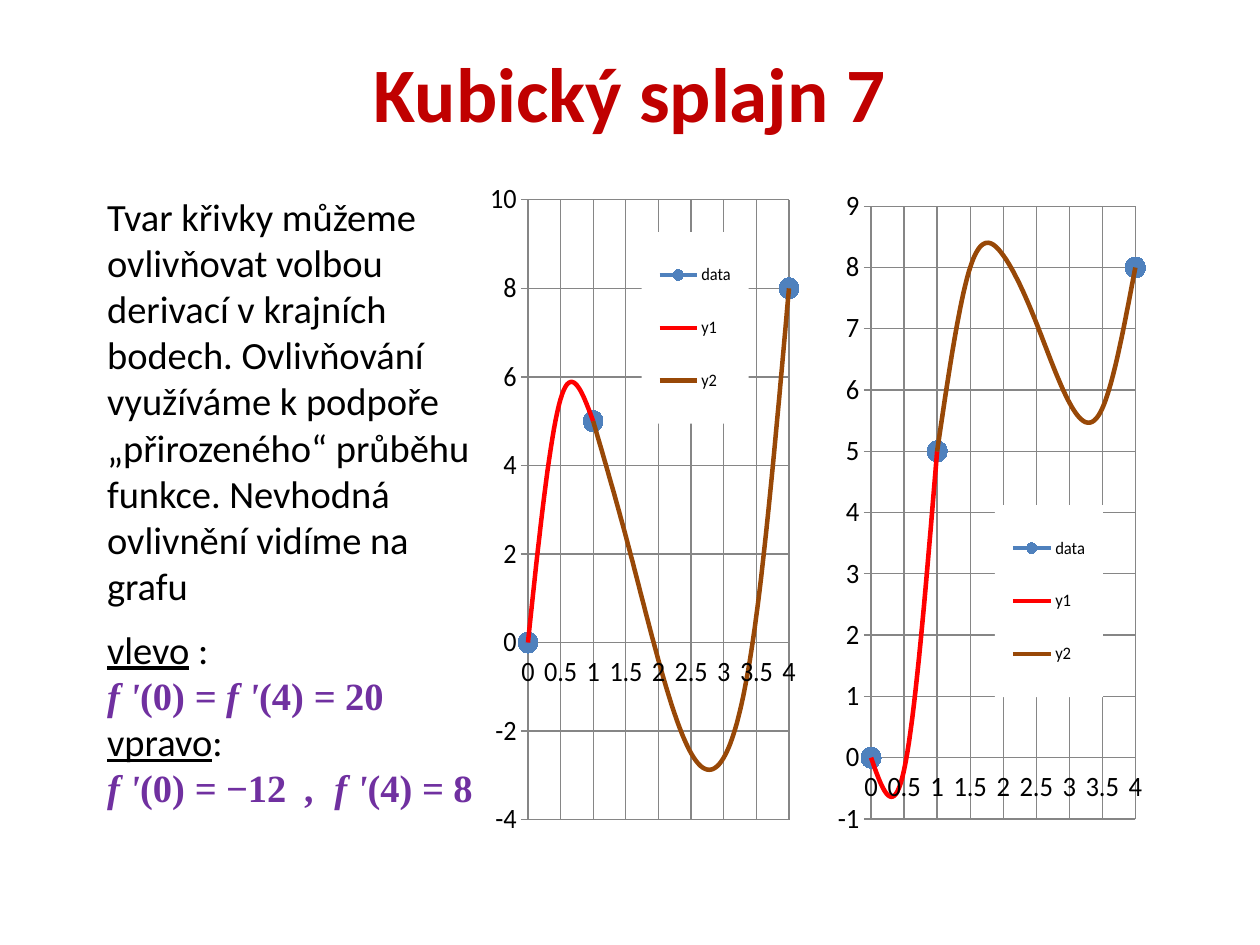
from lxml.etree import SubElement
from pptx import Presentation
from pptx.chart.data import CategoryChartData
from pptx.dml.color import RGBColor
from pptx.enum.chart import XL_CHART_TYPE, XL_LEGEND_POSITION, XL_MARKER_STYLE, XL_TICK_MARK
from pptx.enum.text import MSO_ANCHOR, MSO_AUTO_SIZE, PP_ALIGN
from pptx.oxml.ns import qn
from pptx.util import Inches, Pt

BLACK, RED, PURPLE = "000000", "C00000", "7030A0"
BLUE, BRIGHT_RED, BROWN, GREY, WHITE = "4F81BD", "FF0000", "984807", "868686", "FFFFFF"

PLAIN = {"name": "Calibri", "size": Pt(22), "color": BLACK, "bold": False}
LABEL = {**PLAIN, "underline": True}
NUMBER = {"name": "Times New Roman", "size": Pt(22), "color": PURPLE, "bold": True}
SYMBOL = {**NUMBER, "italic": True}

PARAGRAPHS = [
    [("Tvar křivky můžeme ovlivňovat volbou derivací v krajních bodech. "
      "Ovlivňování využíváme k podpoře „přirozeného“ průběhu funkce. "
      "Nevhodná ovlivnění vidíme na grafu", PLAIN)],
    [("vlevo", LABEL), (" :", PLAIN)],
    [("f '", SYMBOL), ("(0)", NUMBER), (" = f '", SYMBOL), ("(4)", NUMBER),
     (" = ", SYMBOL), ("20", NUMBER)],
    [("vpravo", LABEL), (":", PLAIN)],
    [("f '", SYMBOL), ("(0)", NUMBER), (" = ", SYMBOL), ("−12  ", NUMBER),
     (",  f '", SYMBOL), ("(4)", NUMBER), (" = ", SYMBOL), ("8", NUMBER)],
]

CATEGORIES = ["0", "0.5", "1", "1.5", "2", "2.5", "3", "3.5", "4"]
LEFT_CURVE = {
    "y1": [0, 5.5, 5], "y2": [5, 2.4, -0.4, -2.5, -2.6, 0.6, 8],
    "scale": (-4, 10, 2),
    "plot": (0.072, 0.051, 0.904, 0.906), "legend": (0.466, 0.098, 0.37, 0.28),
}
RIGHT_CURVE = {
    "y1": [0, -0.2, 5], "y2": [5, 8, 8.2, 7.1, 5.8, 5.7, 8],
    "scale": (-1, 9, 1),
    "plot": (0.072, 0.062, 0.904, 0.894), "legend": (0.495, 0.498, 0.37, 0.28),
}


def color(value):
    return RGBColor.from_string(value)


def set_font(font, style):
    for key, value in style.items():
        if key == "color":
            font.color.rgb = color(value)
        else:
            setattr(font, key, value)


def place(shape, box):
    for side, length in zip(("left", "top", "width", "height"), box):
        setattr(shape, side, Inches(length))


def add_title(page, box):
    title = page.shapes.title
    place(title, box)
    frame = title.text_frame
    frame.text = "Kubický splajn 7"
    frame.vertical_anchor = MSO_ANCHOR.MIDDLE
    para = frame.paragraphs[0]
    para.alignment = PP_ALIGN.CENTER
    set_font(para.runs[0].font,
             {"name": "Calibri", "size": Pt(44), "color": RED, "bold": True})


def add_explanation(page, box):
    body = page.placeholders[1]
    place(body, box)
    frame = body.text_frame
    frame.word_wrap = True
    frame.auto_size = MSO_AUTO_SIZE.SHAPE_TO_FIT_TEXT
    for index, runs in enumerate(PARAGRAPHS):
        para = frame.add_paragraph() if index else frame.paragraphs[0]
        para.space_before = Pt(10 if index == 1 else 0)
        properties = para._p.get_or_add_pPr()
        properties.set("marL", "0")
        properties.set("indent", "0")
        SubElement(properties, qn("a:buNone"))
        for text, style in runs:
            span = para.add_run()
            span.text = text
            set_font(span.font, style)


def set_layout(parent, shares, inner=False):
    """Fix a plot area or legend at shares of the chart's size."""
    layout = parent.find(qn("c:layout"))
    if layout is None:
        layout = SubElement(parent, qn("c:layout"))
        anchor = parent.find(qn("c:legendPos"))
        if anchor is None:
            parent.insert(0, layout)
        else:
            anchor.addnext(layout)
    for child in list(layout):
        layout.remove(child)
    manual = SubElement(layout, qn("c:manualLayout"))
    entries = [("layoutTarget", "inner")] if inner else []
    entries += [("xMode", "edge"), ("yMode", "edge"), *zip("xywh", shares)]
    for tag, value in entries:
        SubElement(manual, qn(f"c:{tag}")).set("val", str(value))


def start_curves_on_axis(value_axis):
    """Put the first category on the value axis, not half a step beside it."""
    element = value_axis._element
    crossing = element.find(qn("c:crossBetween"))
    if crossing is None:
        crossing = element.makeelement(qn("c:crossBetween"), {})
        element.find(qn("c:crosses")).addnext(crossing)
    crossing.set("val", "midCat")


def format_axes(chart, scale):
    for axis in (chart.category_axis, chart.value_axis):
        axis.has_major_gridlines = True
        axis.major_tick_mark = XL_TICK_MARK.OUTSIDE
        for line in (axis.major_gridlines.format.line, axis.format.line):
            line.color.rgb = color(GREY)
            line.width = Pt(0.75)
        set_font(axis.tick_labels.font, {**PLAIN, "size": Pt(16)})
    values = chart.value_axis
    values.minimum_scale, values.maximum_scale, values.major_unit = scale
    start_curves_on_axis(values)


def format_series(chart):
    for series, shade in zip(chart.plots[0].series, (BLUE, BRIGHT_RED, BROWN)):
        is_data = series.name == "data"
        series.smooth = not is_data
        series.format.line.color.rgb = color(shade)
        series.format.line.width = Pt(2.25 if is_data else 2.75)
        marker = series.marker
        marker.style = XL_MARKER_STYLE.CIRCLE if is_data else XL_MARKER_STYLE.NONE
        if is_data:
            marker.size = 12
            marker.format.fill.solid()
            marker.format.fill.fore_color.rgb = color(shade)
            marker.format.line.color.rgb = color(shade)


def add_legend(chart, shares):
    chart.has_legend = True
    legend = chart.legend
    legend.position = XL_LEGEND_POSITION.RIGHT
    legend.include_in_layout = False
    set_layout(legend._element, shares)
    set_font(legend.font, {**PLAIN, "size": Pt(10)})
    properties = legend._element.makeelement(qn("c:spPr"), {})
    fill = SubElement(properties, qn("a:solidFill"))
    SubElement(fill, qn("a:srgbClr")).set("val", WHITE)
    legend._element.find(qn("c:txPr")).addprevious(properties)


def add_spline_chart(page, box, curve):
    """Plot two spline pieces that meet at the middle data point."""
    first, second = curve["y1"], curve["y2"]
    count = len(CATEGORIES)
    data = CategoryChartData()
    data.categories = CATEGORIES
    data.add_series("data", [first[0], None, first[-1], *[None] * 5, second[-1]])
    data.add_series("y1", first + [None] * (count - len(first)))
    data.add_series("y2", [None] * (count - len(second)) + second)
    chart = page.shapes.add_chart(
        XL_CHART_TYPE.LINE_MARKERS, *map(Inches, box), data).chart
    chart.has_title = False
    set_font(chart.font, {**PLAIN, "size": Pt(10)})
    chart.plots[0].vary_by_categories = False
    format_axes(chart, curve["scale"])
    format_series(chart)
    add_legend(chart, curve["legend"])
    set_layout(chart._chartSpace.chart.plotArea, curve["plot"], inner=True)


def main():
    deck = Presentation()
    deck.slide_width, deck.slide_height = Inches(10), Inches(7.5)
    page = deck.slides.add_slide(deck.slide_layouts[1])
    add_title(page, (0.5, 0.3, 9, 0.85))
    add_explanation(page, (0.75, 1.48, 3.15, 5.05))
    add_spline_chart(page, (3.89, 1.31, 2.45, 5.43), LEFT_CURVE)
    add_spline_chart(page, (6.65, 1.3, 2.44, 5.44), RIGHT_CURVE)
    deck.save("out.pptx")


if __name__ == "__main__":
    main()
